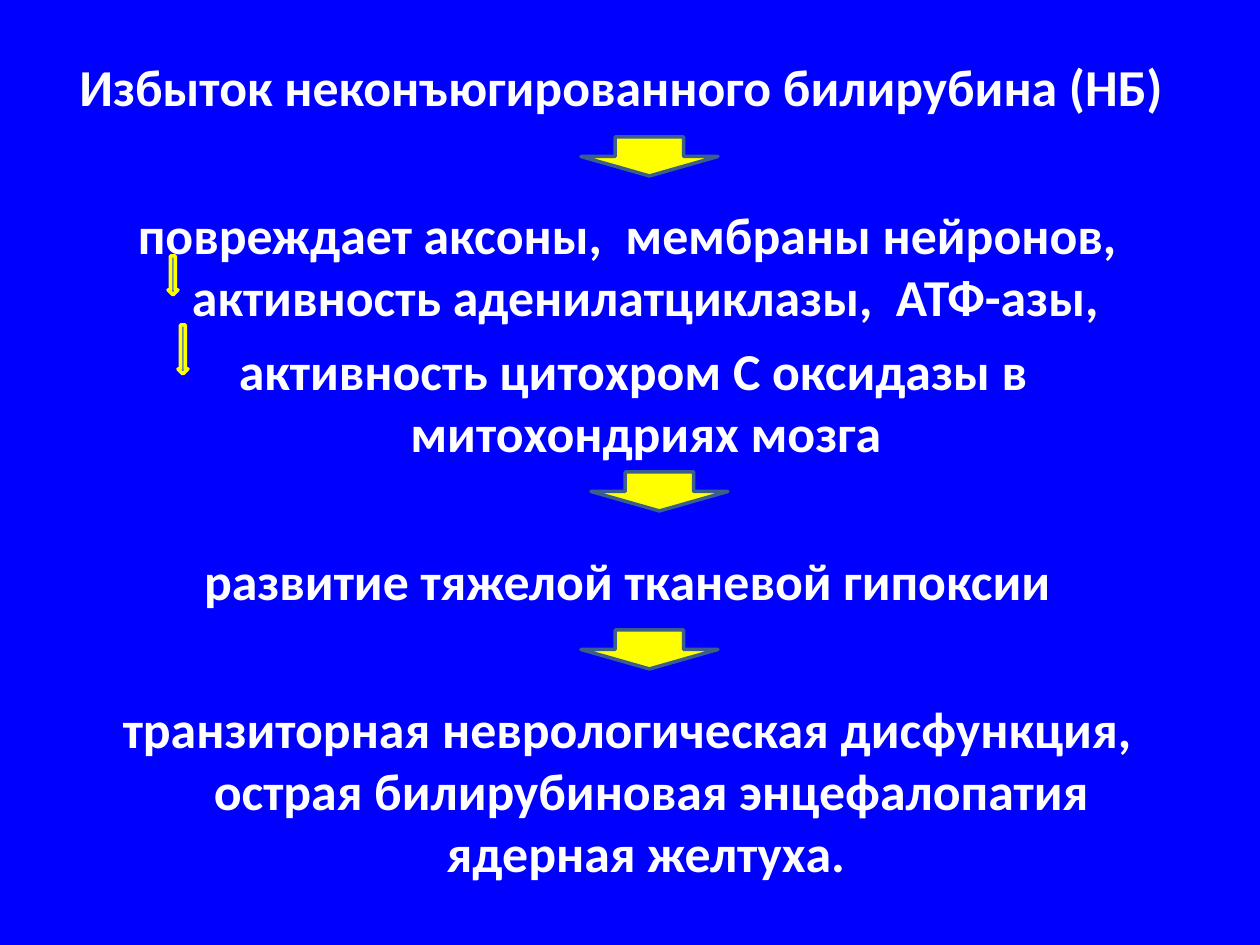
from pptx import Presentation
from pptx import util as u
from pptx.dml.color import RGBColor
from pptx.enum import shapes, text

SCALE = 914400 / 126
BLUE = RGBColor(0x00, 0x00, 0xFF)
WHITE = RGBColor(0xFF, 0xFF, 0xFF)
YELLOW = RGBColor(0xFF, 0xFF, 0x00)
STEEL = RGBColor(0x3A, 0x5F, 0x8C)
SKY = RGBColor(0x4F, 0x81, 0xBD)

LINE_GAP = 62
PARA_GAP = 12
STEP_GAP = LINE_GAP + 2 * PARA_GAP
INDENT = 48

STEPS = [
    ("Избыток неконъюгированного билирубина (НБ) ", 4),
    ("повреждает аксоны,  мембраны нейронов, "
     "активность аденилатциклазы,  АТФ-азы, ", STEP_GAP),
    (" активность цитохром С оксидазы в митохондриях мозга ", PARA_GAP),
    ("развитие тяжелой тканевой гипоксии", STEP_GAP),
    ("транзиторная неврологическая дисфункция, "
     "острая билирубиновая энцефалопатия ядерная желтуха. ", STEP_GAP),
]
FLOW_ARROWS = [(523, 88), (523, 581), (533, 423)]
DECREASE_ARROWS = [(110, 207, 39), (120, 276, 49)]


def px(n):
    return u.Emu(round(n * SCALE))


def set_all(obj, values):
    for name, value in values.items():
        setattr(obj, name, value)


def add_steps(s, x, y, w, h):
    tf = s.shapes.add_textbox(px(x), px(y), px(w), px(h)).text_frame
    tf.word_wrap = True
    for i, (words, gap) in enumerate(STEPS):
        p = tf.paragraphs[0] if i == 0 else tf.add_paragraph()
        set_all(p, {"alignment": text.PP_ALIGN.CENTER,
                    "line_spacing": u.Pt(35.4),
                    "space_before": px(gap)})
        pPr = p._p.get_or_add_pPr()
        pPr.set("marL", str(px(INDENT)))
        pPr.set("indent", str(px(-INDENT)))
        r = p.add_run()
        r.text = words
        set_all(r.font, {"name": "Calibri", "size": u.Pt(29.6), "bold": True})
        r.font.color.rgb = WHITE


def add_arrow(s, x, y, w, h, fill, line):
    sp = s.shapes.add_shape(shapes.MSO_SHAPE.DOWN_ARROW,
                            px(x), px(y), px(w), px(h))
    sp.shadow.inherit = False
    sp.fill.solid()
    sp.fill.fore_color.rgb = fill
    sp.line.color.rgb = line
    sp.line.width = u.Pt(2)


def add_arrows(s, x, y):
    for dx, dy in FLOW_ARROWS:
        add_arrow(s, x + dx, y + dy, 137, 39, YELLOW, STEEL)
    for dx, dy, h in DECREASE_ARROWS:
        add_arrow(s, x + dx, y + dy, 10, h, SKY, YELLOW)


def main():
    prs = Presentation()
    set_all(prs, {"slide_width": px(1260), "slide_height": px(945)})
    s = prs.slides.add_slide(prs.slide_layouts[6])
    s.background.fill.solid()
    s.background.fill.fore_color.rgb = BLUE
    add_steps(s, 59, 49, 1138, 857)
    add_arrows(s, 58, 49)
    prs.save("out.pptx")


if __name__ == "__main__":
    main()
